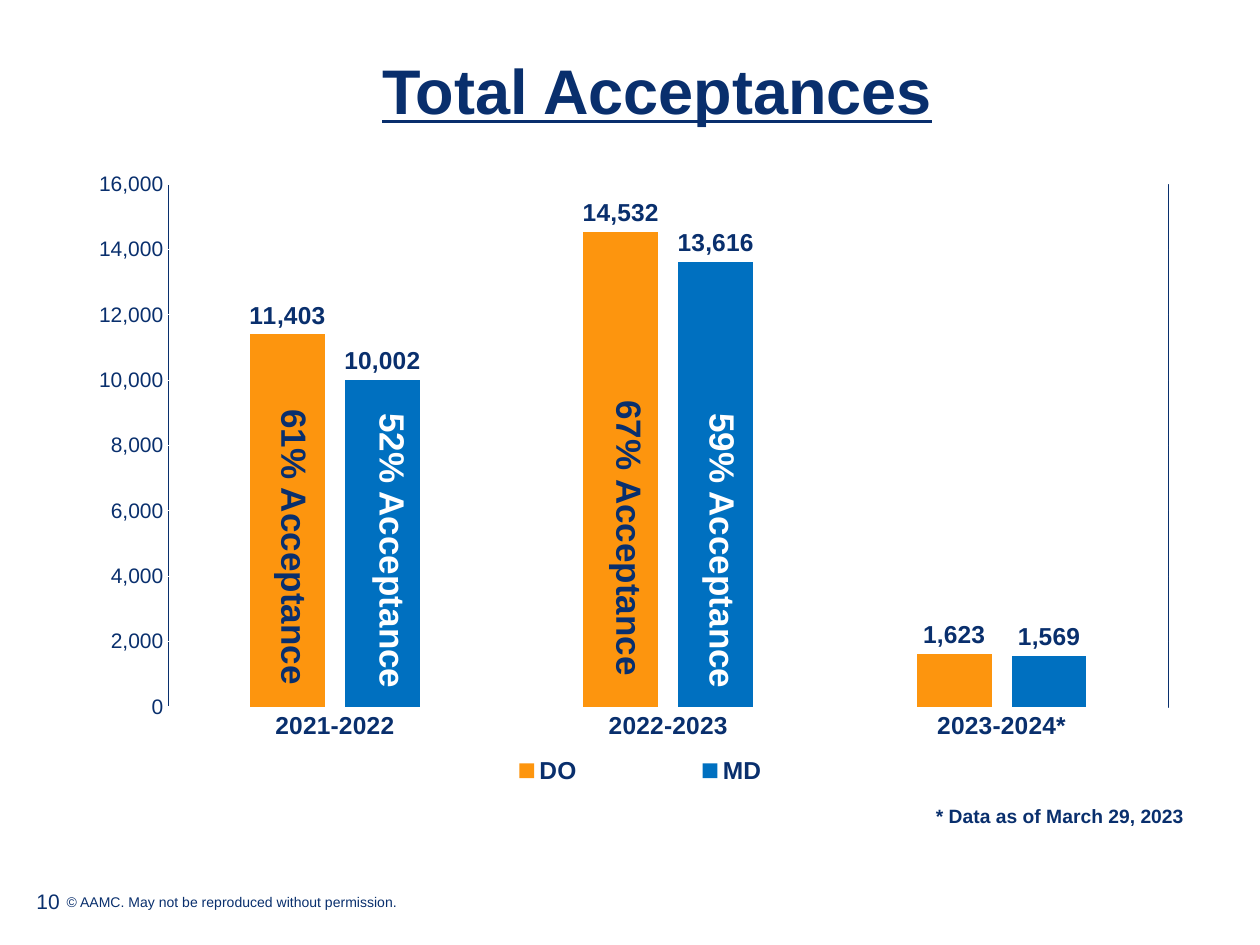
from dataclasses import dataclass

import pptx
import pptx.chart.data
import pptx.dml.color
import pptx.enum.chart
import pptx.enum.text
import pptx.oxml
import pptx.oxml.ns
import pptx.util

WIDTH, HEIGHT = 10, 7.5  # inches
TITLE_ONLY = 5


@dataclass(frozen=True)
class Theme:
    font: str = "Arial"
    navy: str = "092F6D"
    orange: str = "FD950E"
    blue: str = "0070C0"
    white: str = "FFFFFF"
    title: int = 36
    rate: int = 20
    label: int = 14
    axis: int = 12
    note: int = 11
    credit: int = 8


THEME = Theme()


def rgb(color):
    return pptx.dml.color.RGBColor.from_string(color)


def style_font(font, size, color=THEME.navy, bold=False):
    font.name = THEME.font
    font.size = pptx.util.Pt(size)
    font.bold = bold
    font.color.rgb = rgb(color)


def place(left, top, width, height):
    return [pptx.util.Inches(length) for length in (left, top, width, height)]


def add_text(slide, text, frame, size, color=THEME.navy, bold=False, wrap=True):
    box = slide.shapes.add_textbox(*place(*frame))
    box.text_frame.word_wrap = wrap
    para = box.text_frame.paragraphs[0]
    para.text = text
    style_font(para.font, size, color, bold)
    return box


def add_rate(slide, text, left, top, color):
    """Write an acceptance rate down the length of a column."""
    box = add_text(slide, text, (left, top, 0.54, 2.3), THEME.rate, color, True, wrap=False)
    box.text_frame._txBody.bodyPr.set("vert", "vert")


def set_title(slide, text):
    title = slide.shapes.title
    title.left, title.top, title.width, title.height = place(0.63, 0.33, 9.17, 0.68)
    frame = title.text_frame
    frame.margin_left = frame.margin_right = frame.margin_top = frame.margin_bottom = 0
    frame.vertical_anchor = pptx.enum.text.MSO_ANCHOR.BOTTOM
    para = frame.paragraphs[0]
    para.text = text
    para.alignment = pptx.enum.text.PP_ALIGN.CENTER
    para.line_spacing = 0.85
    style_font(para.font, THEME.title, bold=True)
    para.font.underline = True


def set_layout(element, index, shares, inner=False):
    """Fix a chart part at (x, y, w, h) shares of the chart's size."""
    for old in element.findall(pptx.oxml.ns.qn("c:layout")):
        element.remove(old)
    target = '<c:layoutTarget val="inner"/>' if inner else ""
    modes = '<c:xMode val="edge"/><c:yMode val="edge"/>'
    sizes = "".join(f'<c:{key} val="{share}"/>' for key, share in zip("xywh", shares))
    element.insert(index, pptx.oxml.parse_xml(
        f'<c:layout {pptx.oxml.ns.nsdecls("c")}><c:manualLayout>'
        f"{target}{modes}{sizes}</c:manualLayout></c:layout>"))


def outline_plot(plot_area):
    plot_area.append(pptx.oxml.parse_xml(
        f'<c:spPr {pptx.oxml.ns.nsdecls("c", "a")}><a:noFill/><a:ln w="9525"><a:solidFill>'
        f'<a:srgbClr val="{THEME.navy}"/></a:solidFill></a:ln></c:spPr>'))


def style_axes(chart):
    categories, values = chart.category_axis, chart.value_axis
    for axis in (categories, values):
        axis.major_tick_mark = axis.minor_tick_mark = pptx.enum.chart.XL_TICK_MARK.NONE
    style_font(categories.tick_labels.font, THEME.label, bold=True)
    style_font(values.tick_labels.font, THEME.axis)
    values.tick_labels.number_format = "#,##0"
    values.tick_labels.number_format_is_linked = False
    values.minimum_scale, values.maximum_scale, values.major_unit = 0, 16000, 2000
    values.format.line.fill.background()
    values.has_major_gridlines = True
    for line in (categories.format.line, values.major_gridlines.format.line):
        line.color.rgb = rgb(THEME.white)
        line.width = pptx.util.Pt(0.75)


def style_series(series, color):
    series.format.fill.solid()
    series.format.fill.fore_color.rgb = rgb(color)
    labels = series.data_labels
    labels.show_value = True
    labels.position = pptx.enum.chart.XL_LABEL_POSITION.OUTSIDE_END
    labels.number_format = "#,##0"
    labels.number_format_is_linked = False
    style_font(labels.font, THEME.label, bold=True)


def add_acceptance_chart(slide):
    data = pptx.chart.data.CategoryChartData(number_format="#,##0")
    data.categories = ["2021-2022", "2022-2023", "2023-2024*"]
    data.add_series("DO", [11403, 14532, 1623])
    data.add_series("MD", [10002, 13616, 1569])
    chart = slide.shapes.add_chart(
        pptx.enum.chart.XL_CHART_TYPE.COLUMN_CLUSTERED,
        *place(0.63, 1.26, 8.82, 5.06), data).chart
    chart.has_title = False
    style_font(chart.font, 10)
    plot = chart.plots[0]
    plot.gap_width, plot.overlap, plot.vary_by_categories = 219, -27, False
    for series, color in zip(plot.series, (THEME.orange, THEME.blue)):
        style_series(series, color)
    style_axes(chart)

    chart.has_legend = True
    legend = chart.legend
    legend.position = pptx.enum.chart.XL_LEGEND_POSITION.BOTTOM
    legend.include_in_layout = False
    style_font(legend.font, THEME.label, bold=True)
    set_layout(legend._element, 1, (0.29, 0.93, 0.43, 0.06))

    plot_area = chart._chartSpace.chart.plotArea
    set_layout(plot_area, 0, (0.08, 0.04, 0.9, 0.82), inner=True)
    outline_plot(plot_area)


def main():
    deck = pptx.Presentation()
    deck.slide_width, deck.slide_height = pptx.util.Inches(WIDTH), pptx.util.Inches(HEIGHT)
    page = deck.slides.add_slide(deck.slide_layouts[TITLE_ONLY])

    set_title(page, "Total Acceptances")
    add_text(page, "© AAMC. May not be reproduced without permission.",
             (0.43, 7.04, 8.22, 0.23), THEME.credit)
    number = add_text(page, "10", (0.19, 6.95, 2.25, 0.4), THEME.axis)
    number.text_frame.vertical_anchor = pptx.enum.text.MSO_ANCHOR.MIDDLE
    add_acceptance_chart(page)
    add_text(page, "* Data as of March 29, 2023", (7.33, 6.33, 2.26, 0.29),
             THEME.note, bold=True)
    for percent, left, top, color in (
        (61, 2.02, 3.15, THEME.navy),
        (67, 4.68, 3.08, THEME.navy),
        (52, 2.8, 3.18, THEME.white),
        (59, 5.42, 3.18, THEME.white),
    ):
        add_rate(page, f"{percent}% Acceptance", left, top, color)

    deck.save("out.pptx")


if __name__ == "__main__":
    main()
